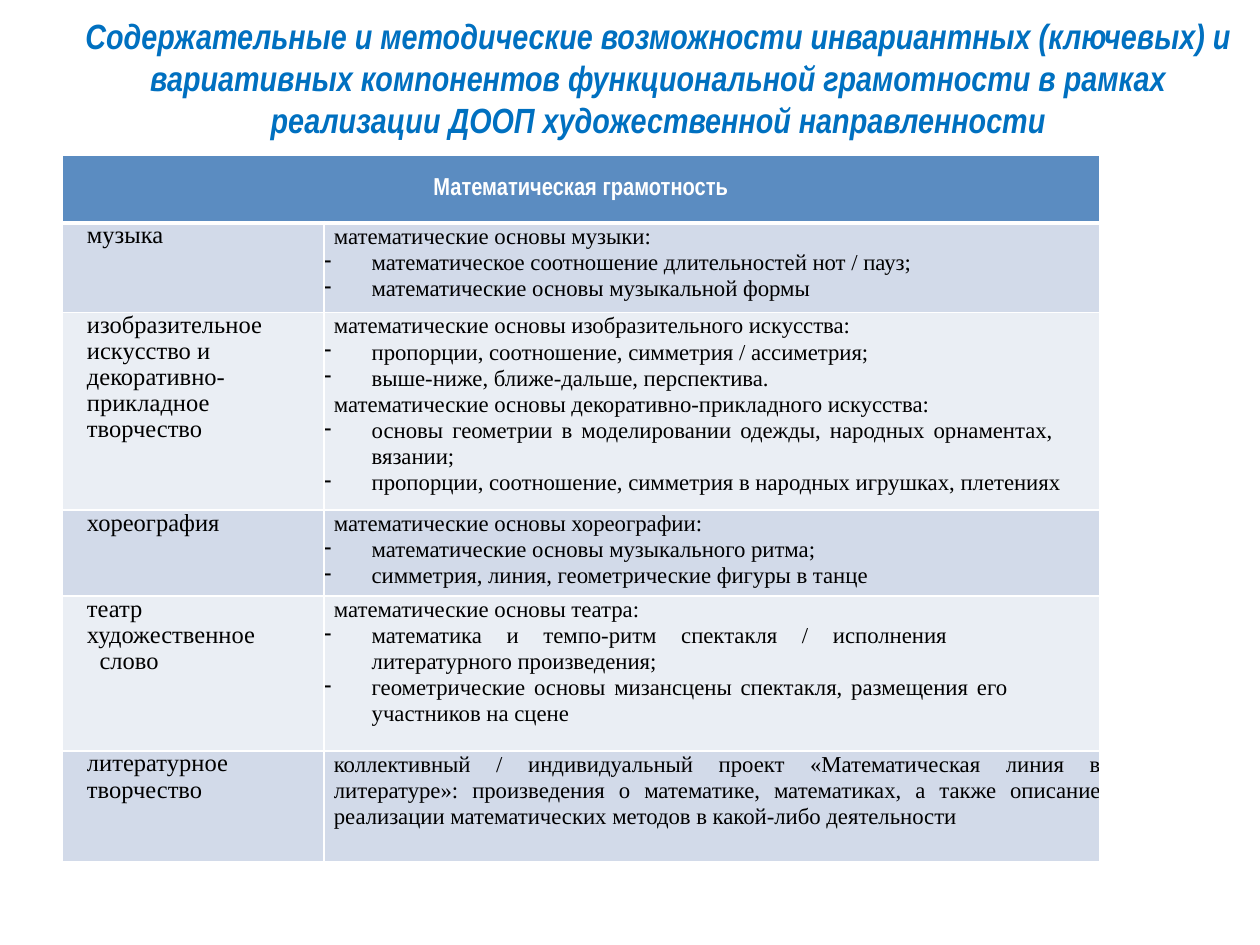
from lxml import etree
from pptx import Presentation
from pptx.dml.color import RGBColor
from pptx.enum.text import MSO_ANCHOR, PP_ALIGN
from pptx.oxml.ns import qn
from pptx.util import Inches, Pt

MID = MSO_ANCHOR.MIDDLE
LEFT, MIDDLE, FULL = PP_ALIGN.LEFT, PP_ALIGN.CENTER, PP_ALIGN.JUSTIFY
WIDE, HIGH = Inches(10), Inches(7.5)
HUES = {"title": "0070C0", "head": "5B8CC1", "odd": "D2DAE9",
        "even": "EAEEF4", "ink": "000000", "white": "FFFFFF"}
SANS, SERIF = "Arial Narrow", "Times New Roman"
COLS = (0.208, 0.616)
ROWS = (0.072, 0.095, 0.209, 0.091, 0.164, 0.117)
TITLE = ("Содержательные и методические возможности инвариантных (ключевых) и "
         "вариативных компонентов функциональной грамотности в рамках "
         "реализации ДООП художественной направленности")
HEAD = "Математическая грамотность"

# Each body item: kind, text, right margin in inches
TOPICS = (
    (("музыка",),
     (("lead", "математические основы музыки:", 0),
      ("dash", "математическое соотношение длительностей нот / пауз;", 0),
      ("dash", "математические основы музыкальной формы", 0))),
    (("изобразительное искусство и", "декоративно-прикладное", "творчество"),
     (("lead", "математические основы изобразительного искусства:", 0),
      ("dash", "пропорции, соотношение, симметрия / ассиметрия;", 0),
      ("dash", "выше-ниже, ближе-дальше, перспектива.", 0),
      ("lead", "математические основы декоративно-прикладного искусства:", 0),
      ("dash", "основы геометрии в моделировании одежды, народных орнаментах, "
       "вязании;", 0.38),
      ("dash", "пропорции, соотношение, симметрия в народных игрушках, "
       "плетениях", 0))),
    (("хореография",),
     (("lead", "математические основы хореографии:", 0),
      ("dash", "математические основы музыкального ритма;", 0),
      ("dash", "симметрия, линия, геометрические фигуры в танце", 0))),
    (("театр", "художественное", "слово"),
     (("lead", "математические основы театра:", 0),
      ("dash", "математика и темпо-ритм спектакля / исполнения "
       "литературного произведения;", 1.22),
      ("dash", "геометрические основы мизансцены спектакля, размещения его "
       "участников на сцене", 0.74))),
    (("литературное творчество",),
     (("lead", "коллективный / индивидуальный проект «Математическая линия в "
       "литературе»: произведения о математике, математиках, а также описание "
       "реализации математических методов в какой-либо деятельности", 0),)),
)


def tint(name):
    """Return the named colour."""
    return RGBColor.from_string(HUES[name])


def write(para, text, size, face, hue, bold=False, slant=False):
    """Add one styled run to a paragraph."""
    run = para.add_run()
    run.text = text
    font = run.font
    font.size, font.name = Pt(size), face
    font.bold, font.italic = bold, slant
    font.color.rgb = tint(hue)


def next_para(frame, first):
    """Return the first paragraph or add another."""
    return frame.paragraphs[0] if first else frame.add_paragraph()


def indent(para, left, hang=0, right=0):
    """Set the margins of a paragraph and its line pitch."""
    props = para._p.get_or_add_pPr()
    props.set("marL", str(Inches(left)))
    props.set("marR", str(Inches(right)))
    props.set("indent", str(Inches(hang)))
    para.line_spacing = Pt(14.9)
    return props


def edge(cell, base=1):
    """Draw white borders around a cell."""
    props = cell._tc.get_or_add_tcPr()
    for spot, (tag, width) in enumerate(
            (("a:lnL", 1), ("a:lnR", 1), ("a:lnT", 1), ("a:lnB", base))):
        line = etree.Element(qn(tag), w=str(Pt(width)))
        fill = etree.SubElement(line, qn("a:solidFill"))
        etree.SubElement(fill, qn("a:srgbClr"), val=HUES["white"])
        props.insert(spot, line)


def paint(cell, hue, base=1):
    """Fill a cell and draw its borders."""
    cell.fill.solid()
    cell.fill.fore_color.rgb = tint(hue)
    edge(cell, base)


def clear(cell):
    """Remove the inner margins of a cell."""
    cell.margin_left = cell.margin_right = 0
    cell.margin_top = cell.margin_bottom = 0


def label(cell, lines):
    """Write the topic name in the first column."""
    for spot, text in enumerate(lines):
        para = next_para(cell.text_frame, spot == 0)
        indent(para, 0.3 if text == "слово" else 0.2)
        para.alignment = LEFT
        write(para, text, 14, SERIF, "ink")


def body(cell, items):
    """Write the lead lines and dashed items of a topic."""
    for spot, (kind, text, right) in enumerate(items):
        para = next_para(cell.text_frame, spot == 0)
        if kind == "dash":
            props = indent(para, 0.38, -0.38, right)
            etree.SubElement(props, qn("a:buChar"), char="-")
        else:
            indent(para, 0.08)
        para.alignment = FULL
        write(para, text, 13, SERIF, "ink")


def title(slide):
    """Add the slide title."""
    box = slide.shapes.add_textbox(
        int(WIDE * 0.049), int(HIGH * 0.005), int(WIDE * 0.947), int(HIGH * 0.155))
    frame = box.text_frame
    frame.word_wrap, frame.vertical_anchor = True, MID
    para = frame.paragraphs[0]
    para.alignment = MIDDLE
    write(para, TITLE, 20, SANS, "title", True, True)


def table(slide):
    """Add the table of topics."""
    grid = slide.shapes.add_table(
        len(ROWS), len(COLS), int(WIDE * 0.049), int(HIGH * 0.164),
        int(WIDE * sum(COLS)), int(HIGH * sum(ROWS))).table
    grid.first_row = grid.horz_banding = False
    for col, share in zip(grid.columns, COLS):
        col.width = int(WIDE * share)
    for row, share in zip(grid.rows, ROWS):
        row.height = int(HIGH * share)
    head = grid.cell(0, 0)
    head.merge(grid.cell(0, 1))
    head.vertical_anchor = MID
    for cell in grid.rows[0].cells:
        paint(cell, "head", 3)
    para = head.text_frame.paragraphs[0]
    para.alignment = MIDDLE
    write(para, HEAD, 14, SANS, "white", True)
    for spot, (lines, items) in enumerate(TOPICS, 1):
        name, text = grid.rows[spot].cells
        for cell in (name, text):
            clear(cell)
            paint(cell, "odd" if spot % 2 else "even")
        label(name, lines)
        body(text, items)


def main():
    """Build and save the slide."""
    deck = Presentation()
    deck.slide_width, deck.slide_height = WIDE, HIGH
    slide = deck.slides.add_slide(deck.slide_layouts[6])
    title(slide)
    table(slide)
    deck.save("out.pptx")


if __name__ == "__main__":
    main()
